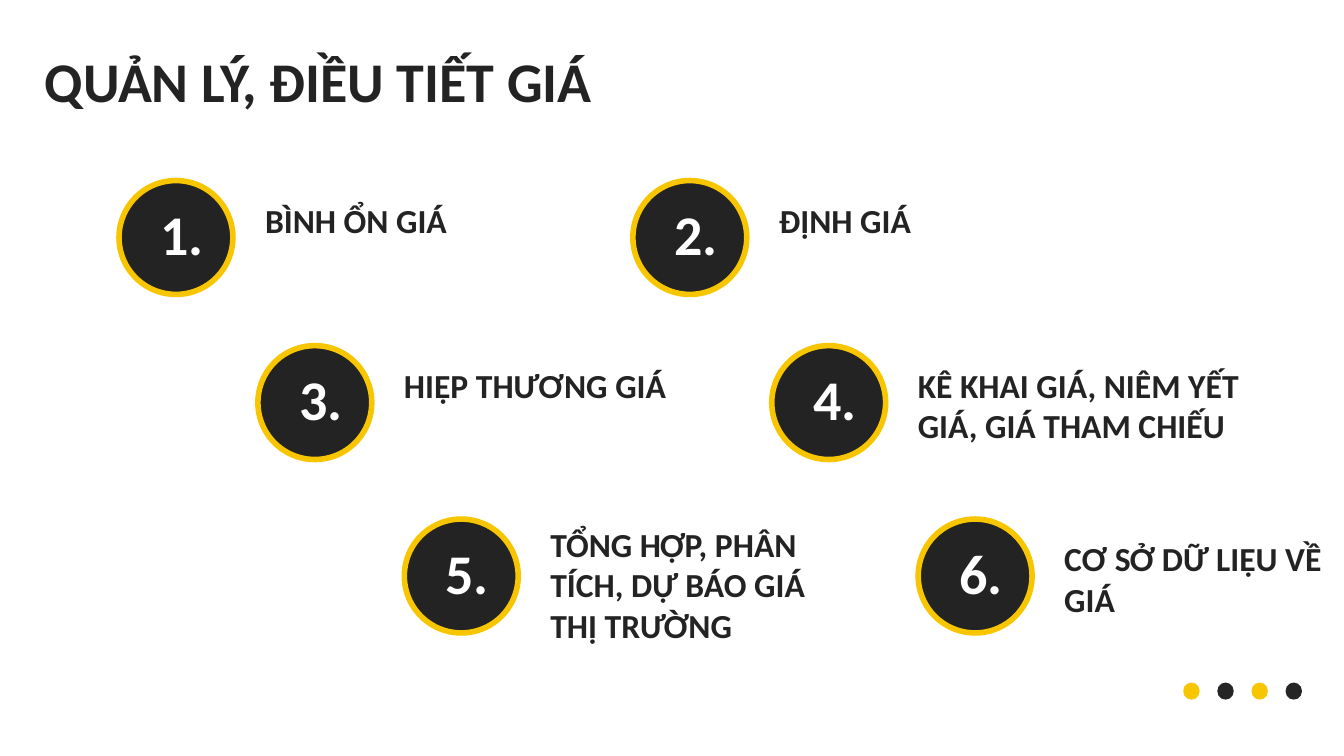
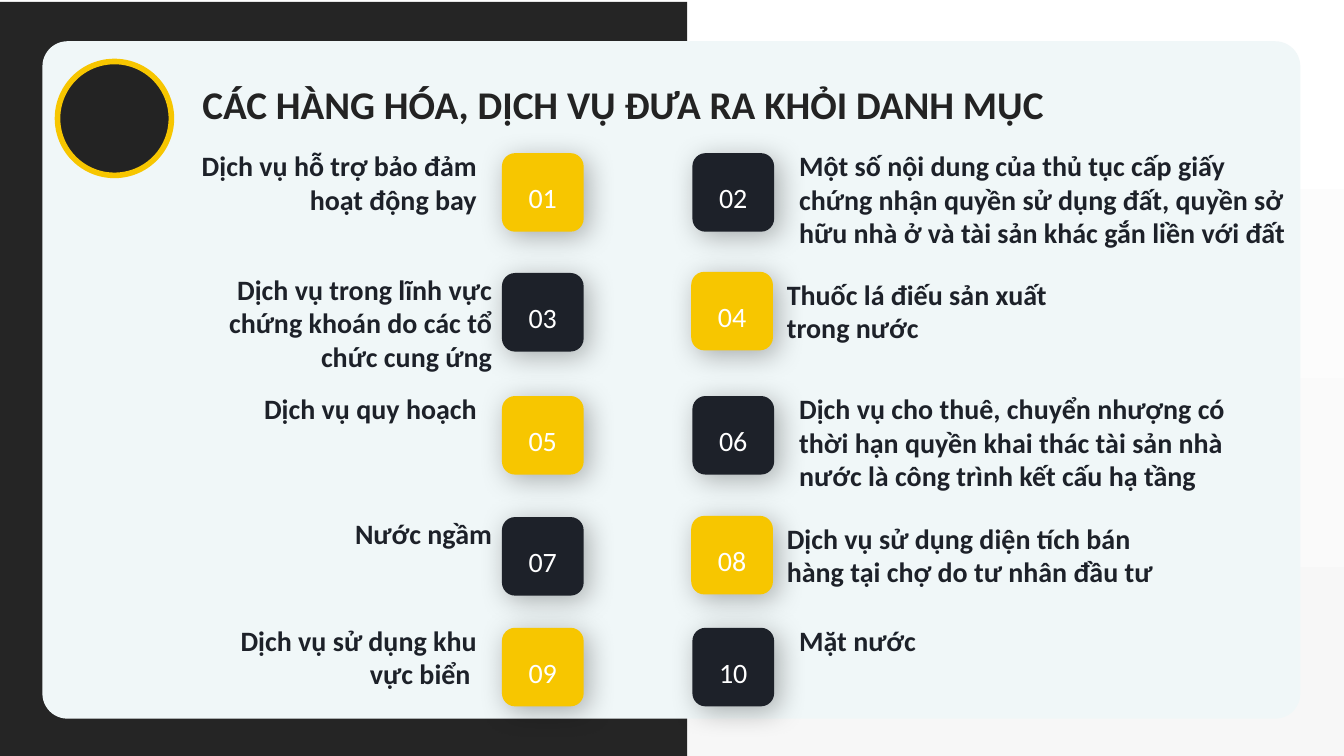
from dataclasses import dataclass

import lxml.etree
import pptx
import pptx.dml.color
import pptx.enum.shapes
import pptx.enum.text
import pptx.oxml.ns
import pptx.presentation
import pptx.shapes.autoshape
import pptx.slide
import pptx.text.text
import pptx.util

Cm = pptx.util.Cm
Align = pptx.enum.text.PP_ALIGN
Preset = pptx.enum.shapes.MSO_SHAPE

FONT = "Calibri"
INK = "232323"
CHARCOAL = "252525"
NAVY = "1D2129"
GOLD = "F7C600"
WHITE = "FFFFFF"
MIST = "F0F7F8"
PALE = "F7F7F7"

MEDALLION_SIZE = 2.87
PAIR_GAP = 12.95
DOT_GAP = 0.86
BADGE_WIDTH = 2.06
BADGE_HEIGHT = 1.98
LEFT_BADGE = 12.65
RIGHT_BADGE = 17.45


@dataclass(frozen=True)
class Box:
    left: float
    top: float
    width: float
    height: float


@dataclass(frozen=True)
class TextStyle:
    size: float
    color: str = INK
    bold: bool = True
    align: Align = Align.LEFT
    spacing: float = 1.0
    wrap: bool = True


@dataclass(frozen=True)
class Topic:
    text: str
    width: float
    height: float
    wrap: bool = True
    drop: float = 0.36


@dataclass(frozen=True)
class TopicRow:
    left: float
    top: float
    topics: tuple[Topic, Topic]


@dataclass(frozen=True)
class GoodsRow:
    top: float
    left_text: str
    left_height: float
    right_text: str
    right_width: float
    right_height: float


TOPIC_ROWS = (
    TopicRow(3.0, 4.55, (
        Topic("BÌNH ỔN GIÁ", 5.13, 1.27, False),
        Topic("ĐỊNH GIÁ", 3.86, 1.27, False),
    )),
    TopicRow(6.5, 8.71, (
        Topic("HIỆP THƯƠNG GIÁ", 7.16, 1.27, False),
        Topic("KÊ KHAI GIÁ, NIÊM YẾT GIÁ, GIÁ THAM CHIẾU", 8.69, 2.31),
    )),
    TopicRow(10.19, 13.08, (
        Topic("TỔNG HỢP, PHÂN TÍCH, DỰ BÁO GIÁ THỊ TRƯỜNG", 7.37, 3.33, drop=0),
        Topic("CƠ SỞ DỮ LIỆU VỀ GIÁ", 7.19, 2.31),
    )),
)

GOODS_ROWS = (
    GoodsRow(3.86, "Dịch vụ hỗ trợ bảo đảm hoạt động bay", 1.96,
             "Một số nội dung của thủ tục cấp giấy chứng nhận quyền sử dụng đất, "
             "quyền sở hữu nhà ở và tài sản khác gắn liền với đất", 12.98, 2.82),
    GoodsRow(6.88, "Dịch vụ trong lĩnh vực chứng khoán do các tổ chức cung ứng", 2.82,
             "Thuốc lá điếu sản xuất trong nước", 7.57, 1.96),
    GoodsRow(9.98, "Dịch vụ quy hoạch", 1.12,
             "Dịch vụ cho thuê, chuyển nhượng có thời hạn quyền khai thác tài sản "
             "nhà nước là công trình kết cấu hạ tầng", 11.99, 2.82),
    GoodsRow(13.03, "Nước ngầm", 1.12,
             "Dịch vụ sử dụng diện tích bán hàng tại chợ do tư nhân đầu tư", 10.57, 1.96),
    GoodsRow(15.82, "Dịch vụ sử dụng khu vực biển ", 1.96, "Mặt nước", 7.57, 1.12),
)


def rgb(color: str) -> pptx.dml.color.RGBColor:
    return pptx.dml.color.RGBColor.from_string(color)


def write(frame: pptx.text.text.TextFrame, text: str, style: TextStyle) -> None:
    frame.word_wrap = style.wrap
    paragraph = frame.paragraphs[0]
    paragraph.alignment = style.align
    paragraph.line_spacing = style.spacing
    run = paragraph.add_run()
    run.text = text
    run.font.name = FONT
    run.font.size = pptx.util.Pt(style.size)
    run.font.bold = style.bold
    run.font.color.rgb = rgb(style.color)


def add_text(slide: pptx.slide.Slide, box: Box, text: str, style: TextStyle) -> None:
    shape = slide.shapes.add_textbox(Cm(box.left), Cm(box.top), Cm(box.width), Cm(box.height))
    write(shape.text_frame, text, style)
    shape.text_frame.auto_size = pptx.enum.text.MSO_AUTO_SIZE.SHAPE_TO_FIT_TEXT


def add_filled(slide: pptx.slide.Slide, preset: Preset, box: Box, color: str,
               rounding: float | None = None) -> pptx.shapes.autoshape.Shape:
    shape = slide.shapes.add_shape(
        preset, Cm(box.left), Cm(box.top), Cm(box.width), Cm(box.height))
    shape.shadow.inherit = False
    shape.fill.solid()
    shape.fill.fore_color.rgb = rgb(color)
    shape.line.fill.background()
    if rounding is not None:
        shape.adjustments[0] = rounding
    return shape


def add_medallion(slide: pptx.slide.Slide, left: float, top: float) -> None:
    circle = add_filled(slide, Preset.OVAL, Box(left, top, MEDALLION_SIZE, MEDALLION_SIZE), INK)
    circle.line.color.rgb = rgb(GOLD)
    circle.line.width = pptx.util.Pt(4)


def add_soft_shadow(shape: pptx.shapes.autoshape.Shape) -> None:
    qn = pptx.oxml.ns.qn
    effects = shape.element.spPr.find(qn("a:effectLst"))
    shadow = lxml.etree.SubElement(
        effects, qn("a:outerShdw"), blurRad=str(pptx.util.Pt(20)),
        dist=str(pptx.util.Pt(5)), dir="2700000", algn="tl", rotWithShape="0")
    color = lxml.etree.SubElement(shadow, qn("a:srgbClr"), val="000000")
    lxml.etree.SubElement(color, qn("a:alpha"), val="30000")


def add_badge(slide: pptx.slide.Slide, left: float, top: float, number: int, color: str) -> None:
    badge = add_filled(slide, Preset.ROUNDED_RECTANGLE,
                       Box(left, top, BADGE_WIDTH, BADGE_HEIGHT), color)
    add_soft_shadow(badge)
    frame = badge.text_frame
    frame.margin_left = frame.margin_right = frame.margin_top = frame.margin_bottom = 0
    frame.vertical_anchor = pptx.enum.text.MSO_ANCHOR.MIDDLE
    write(frame, f"{number:02}", TextStyle(20, WHITE, False, Align.CENTER, 1.3))


def add_blank_slide(presentation: pptx.presentation.Presentation) -> pptx.slide.Slide:
    return presentation.slides.add_slide(presentation.slide_layouts[6])


def build_topics(presentation: pptx.presentation.Presentation) -> None:
    slide = add_blank_slide(presentation)
    slide.background.fill.solid()
    slide.background.fill.fore_color.rgb = rgb(WHITE)
    add_text(slide, Box(0.69, 1.24, 14.66, 1.8), "QUẢN LÝ, ĐIỀU TIẾT GIÁ",
             TextStyle(40, align=Align.CENTER, spacing=0.9))
    number = 0
    for row in TOPIC_ROWS:
        for column, topic in enumerate(row.topics):
            number += 1
            left = row.left + column * PAIR_GAP
            add_text(slide, Box(left + 3.43, row.top + topic.drop, topic.width, topic.height),
                     topic.text, TextStyle(24, wrap=topic.wrap))
            add_medallion(slide, left, row.top)
            add_text(slide, Box(left + 0.1, row.top + 0.36, 2.97, 1.96), f"{number}.",
                     TextStyle(40, WHITE, align=Align.CENTER))
    for index, color in enumerate((GOLD, CHARCOAL) * 2):
        add_filled(slide, Preset.ROUNDED_RECTANGLE,
                   Box(29.82 + index * DOT_GAP, 17.2, 0.41, 0.43), color, 0.5)


def build_goods(presentation: pptx.presentation.Presentation) -> None:
    slide = add_blank_slide(presentation)
    background = slide.background.fill
    background.gradient()
    background.gradient_angle = 270
    for stop, color in zip(background.gradient_stops, (WHITE, PALE)):
        stop.color.rgb = rgb(color)
    add_filled(slide, Preset.RECTANGLE, Box(0, 0.05, 17.32, 19), CHARCOAL)
    add_filled(slide, Preset.ROUNDED_RECTANGLE, Box(1.07, 1.04, 31.7, 17.07), MIST, 0.037)
    add_text(slide, Box(4.85, 1.9, 21.97, 1.45), "CÁC HÀNG HÓA, DỊCH VỤ ĐƯA RA KHỎI DANH MỤC",
             TextStyle(28, wrap=False))
    add_medallion(slide, 1.45, 1.55)
    for index, row in enumerate(GOODS_ROWS):
        inset = index % 2 == 1
        left_color, right_color = (NAVY, GOLD) if inset else (GOLD, NAVY)
        text_left, text_right = (4.98, 19.58) if inset else (4.6, 19.89)
        left_rise, right_rise = (0.15, 0.02) if inset else (0.24, 0.24)
        badge_shift = 0.03 if inset else 0
        add_badge(slide, LEFT_BADGE, row.top, 2 * index + 1, left_color)
        add_text(slide, Box(text_left, row.top - left_rise, 7.67, row.left_height),
                 row.left_text, TextStyle(20, NAVY, align=Align.RIGHT))
        add_badge(slide, RIGHT_BADGE - badge_shift, row.top - badge_shift,
                  2 * index + 2, right_color)
        add_text(slide, Box(text_right, row.top - right_rise, row.right_width, row.right_height),
                 row.right_text, TextStyle(20, NAVY))


def main() -> None:
    presentation = pptx.Presentation()
    presentation.slide_width = Cm(33.87)
    presentation.slide_height = Cm(19.05)
    build_topics(presentation)
    build_goods(presentation)
    presentation.save("out.pptx")


if __name__ == "__main__":
    main()
